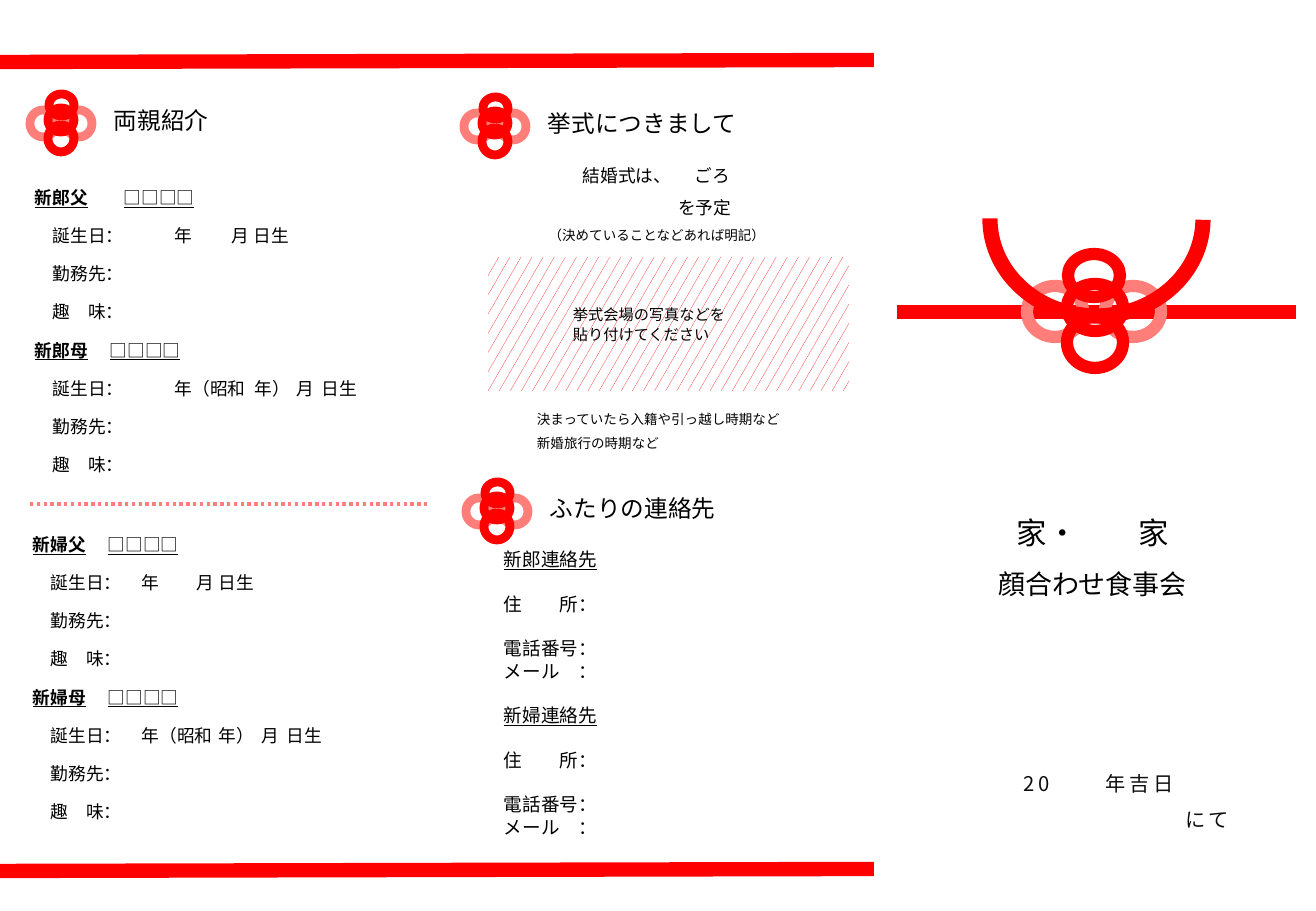
from dataclasses import dataclass
from typing import Any

import lxml.etree
import pptx
import pptx.dml.color
import pptx.enum.dml
import pptx.enum.shapes
import pptx.enum.text
import pptx.oxml.ns
import pptx.util

EMU_PER_PX = 7526
COLOURS = {"red": "FF0000", "pale": "FF7E79", "black": "000000",
           "soft black": "0D0D0D", "white": "FFFFFF"}
JAPANESE_FONT = "Noto Sans CJK JP"
ALIGN = pptx.enum.text.PP_ALIGN
SHAPE = pptx.enum.shapes.MSO_SHAPE


@dataclass(frozen=True)
class Area:
    left: int
    top: int
    width: int
    height: int


@dataclass(frozen=True)
class Style:
    size: float
    pitch: float
    colour: str = "black"
    font: str = JAPANESE_FONT
    spacing: int = 0


@dataclass(frozen=True)
class Span:
    text: str
    bold: bool = False
    underline: bool = False


@dataclass(frozen=True)
class Line:
    spans: tuple[Span, ...]
    stops: tuple[int, ...] = ()
    align: Any = ALIGN.LEFT
    before: float = 0


@dataclass(frozen=True)
class Stroke:
    start: tuple[int, int]
    end: tuple[int, int]
    colour: str = "red"
    width: float = 8.5
    dash: Any = None


@dataclass(frozen=True)
class Ring:
    area: Area
    colour: str


@dataclass(frozen=True)
class Section:
    left: int
    top: int
    title: str


@dataclass(frozen=True)
class Parent:
    role: str
    name_stop: int
    birth: str
    birth_stops: tuple[int, ...]


HEADING = Style(14, 20)
FAMILY = Style(10.5, 22.6)
PLAN = Style(10.5, 19)
SMALL = Style(8, 14.2)
CONTACT = Style(11, 13.2)
PHOTO_NOTE = Style(9, 11.3, font="Calibri")
DATE = Style(12, 21.3, "soft black", spacing=200)

SMALL_KNOT = (
    Ring(Area(0, 16, 26, 27), "pale"), Ring(Area(36, 16, 26, 27), "pale"),
    Ring(Area(18, 14, 26, 24), "red"), Ring(Area(18, 31, 26, 27), "red"),
    Ring(Area(19, 0, 25, 22), "red"))
LARGE_KNOT = (
    Ring(Area(0, 32, 56, 51), "pale"), Ring(Area(78, 32, 56, 51), "pale"),
    Ring(Area(40, 30, 56, 47), "red"), Ring(Area(40, 63, 56, 51), "red"),
    Ring(Area(41, 0, 52, 43), "red"))

STROKES = (
    Stroke((0, 62), (874, 60)),
    Stroke((0, 871), (874, 869)),
    Stroke((30, 504), (428, 504), "pale", 0, pptx.enum.dml.MSO_LINE.ROUND_DOT))
SECTIONS = (Section(30, 94, "両親紹介"), Section(464, 97, "挙式につきまして"),
            Section(466, 482, "ふたりの連絡先"))
FAMILIES = (
    (Area(35, 170, 395, 306), (
        Parent("新郎父", 89, "\t誕生日：\t年\t月 日生", (18, 140, 197)),
        Parent("新郎母", 75, "\t誕生日：\t年（昭和\t年）\t月\t日生", (18, 140, 220, 262, 287)))),
    (Area(33, 517, 395, 306), (
        Parent("新婦父", 75, "\t誕生日：\t年\t月 日生", (18, 109, 164)),
        Parent("新婦母", 75, "\t誕生日：\t年（昭和\t年）\t月\t日生", (18, 109, 186, 229, 254)))))


def px(length: int) -> int:
    return pptx.util.Emu(length * EMU_PER_PX)


def bounds(area: Area) -> tuple[int, ...]:
    return tuple(px(n) for n in (area.left, area.top, area.width, area.height))


def rgb(name: str) -> pptx.dml.color.RGBColor:
    return pptx.dml.color.RGBColor.from_string(COLOURS[name])


def apply(target: Any, values: dict[str, Any]) -> None:
    for name, value in values.items():
        setattr(target, name, value)


def plain(text: str, *stops: int, align: Any = ALIGN.LEFT) -> Line:
    return Line((Span(text),), stops, align)


def add_text(page: Any, area: Area, style: Style, lines: list[Line]) -> None:
    box = page.shapes.add_textbox(*bounds(area))
    frame = box.text_frame
    apply(frame, {"word_wrap": True, "margin_left": 0, "margin_right": 0,
                  "margin_top": 0, "margin_bottom": 0})
    qn = pptx.oxml.ns.qn
    for index, line in enumerate(lines):
        para = frame.add_paragraph() if index else frame.paragraphs[0]
        if line.stops:
            tabs = lxml.etree.SubElement(para._p.get_or_add_pPr(), qn("a:tabLst"))
            for stop in line.stops:
                lxml.etree.SubElement(tabs, qn("a:tab"), pos=str(int(px(stop))), algn="l")
        apply(para, {"alignment": line.align,
                     "line_spacing": pptx.util.Pt(style.pitch),
                     "space_before": pptx.util.Pt(line.before)})
        for span in line.spans:
            run = para.add_run()
            run.text = span.text
            apply(run.font, {"size": pptx.util.Pt(style.size), "name": style.font,
                             "bold": span.bold, "underline": span.underline})
            run.font.color.rgb = rgb(style.colour)
            properties = run._r.get_or_add_rPr()
            lxml.etree.SubElement(properties, qn("a:ea"), typeface=JAPANESE_FONT)
            if style.spacing:
                properties.set("spc", str(style.spacing))


def add_stroke(page: Any, stroke: Stroke) -> None:
    line = page.shapes.add_connector(
        pptx.enum.shapes.MSO_CONNECTOR.STRAIGHT,
        *(px(n) for n in stroke.start + stroke.end))
    line.line.color.rgb = rgb(stroke.colour)
    apply(line.line, {"width": pptx.util.Pt(stroke.width), "dash_style": stroke.dash})
    lxml.etree.SubElement(line._element.spPr, pptx.oxml.ns.qn("a:effectLst"))


def add_outline(shapes: Any, kind: Any, area: Area, colour: str, width: float) -> Any:
    shape = shapes.add_shape(kind, *bounds(area))
    shape.shadow.inherit = False
    shape.fill.background()
    shape.line.color.rgb = rgb(colour)
    shape.line.width = pptx.util.Pt(width)
    return shape


def add_knot(page: Any, left: int, top: int, rings: tuple[Ring, ...], width: float) -> None:
    """Draw interlaced cord rings as one group."""
    group = page.shapes.add_group_shape()
    for ring in rings:
        area = Area(left + ring.area.left, top + ring.area.top,
                    ring.area.width, ring.area.height)
        add_outline(group.shapes, SHAPE.OVAL, area, ring.colour, width)


def add_photo_area(page: Any) -> None:
    shape = page.shapes.add_shape(SHAPE.RECTANGLE, *bounds(Area(488, 257, 361, 134)))
    shape.shadow.inherit = False
    shape.fill.patterned()
    shape.fill.pattern = pptx.enum.dml.MSO_PATTERN.SMALL_CONFETTI
    shape.fill.fore_color.rgb = rgb("red")
    shape.fill.back_color.rgb = rgb("white")
    shape.line.fill.background()
    add_text(page, Area(573, 305, 159, 40), PHOTO_NOTE,
             [plain("挙式会場の写真などを貼り付けてください")])


def add_cover(page: Any) -> None:
    add_stroke(page, Stroke((897, 312), (1296, 312)))
    add_knot(page, 1027, 254, LARGE_KNOT, 7.25)
    arc = add_outline(page.shapes, SHAPE.ARC, Area(990, 122, 213, 194), "red", 9)
    arc.adjustments[0], arc.adjustments[1] = 0.28, 108.22
    add_text(page, Area(1017, 505, 180, 46), Style(18, 27), [plain("家・\t家", 121)])
    add_text(page, Area(924, 559, 337, 41), Style(16, 24),
             [plain("顔合わせ食事会", align=ALIGN.CENTER)])
    add_text(page, Area(1024, 760, 205, 72), DATE,
             [plain("20\t年吉日", 82), plain("にて", align=ALIGN.RIGHT)])


def parent_lines(parent: Parent) -> list[Line]:
    name = (Span(parent.role + "\t", True, True), Span("□□□□", False, True))
    return [Line(name, (parent.name_stop,)), plain(parent.birth, *parent.birth_stops),
            plain("\t勤務先：", 18), plain("\t趣　味：", 18)]


def contact_lines(person: str, before: float) -> list[Line]:
    gap = CONTACT.pitch
    return [Line((Span(person + "連絡先", underline=True),), before=before),
            Line((Span("住\t所："),), (56,), before=gap),
            Line((Span("電話番号："),), before=gap), plain("メール　：")]


def main() -> None:
    deck = pptx.Presentation()
    apply(deck, {"slide_width": px(1316), "slide_height": px(911)})
    page = deck.slides.add_slide(deck.slide_layouts[6])
    add_photo_area(page)
    add_cover(page)
    for stroke in STROKES:
        add_stroke(page, stroke)
    for section in SECTIONS:
        add_knot(page, section.left, section.top, SMALL_KNOT, 5.25)
        add_text(page, Area(section.left + 84, section.top + 6, 254, 34), HEADING,
                 [plain(section.title)])
    for area, parents in FAMILIES:
        add_text(page, area, FAMILY,
                 [line for parent in parents for line in parent_lines(parent)])
    add_text(page, Area(583, 154, 148, 64), PLAN,
             [plain("結婚式は、\tごろ", 112), plain("を予定", align=ALIGN.RIGHT)])
    add_text(page, Area(525, 219, 264, 24), SMALL,
             [plain("（決めていることなどあれば明記）", align=ALIGN.CENTER)])
    add_text(page, Area(537, 403, 310, 48), SMALL,
             [plain("決まっていたら入籍や引っ越し時期など"), plain("新婚旅行の時期など")])
    add_text(page, Area(504, 548, 340, 290), CONTACT,
             contact_lines("新郎", 0) + contact_lines("新婦", CONTACT.pitch))
    deck.save("out.pptx")


if __name__ == "__main__":
    main()
